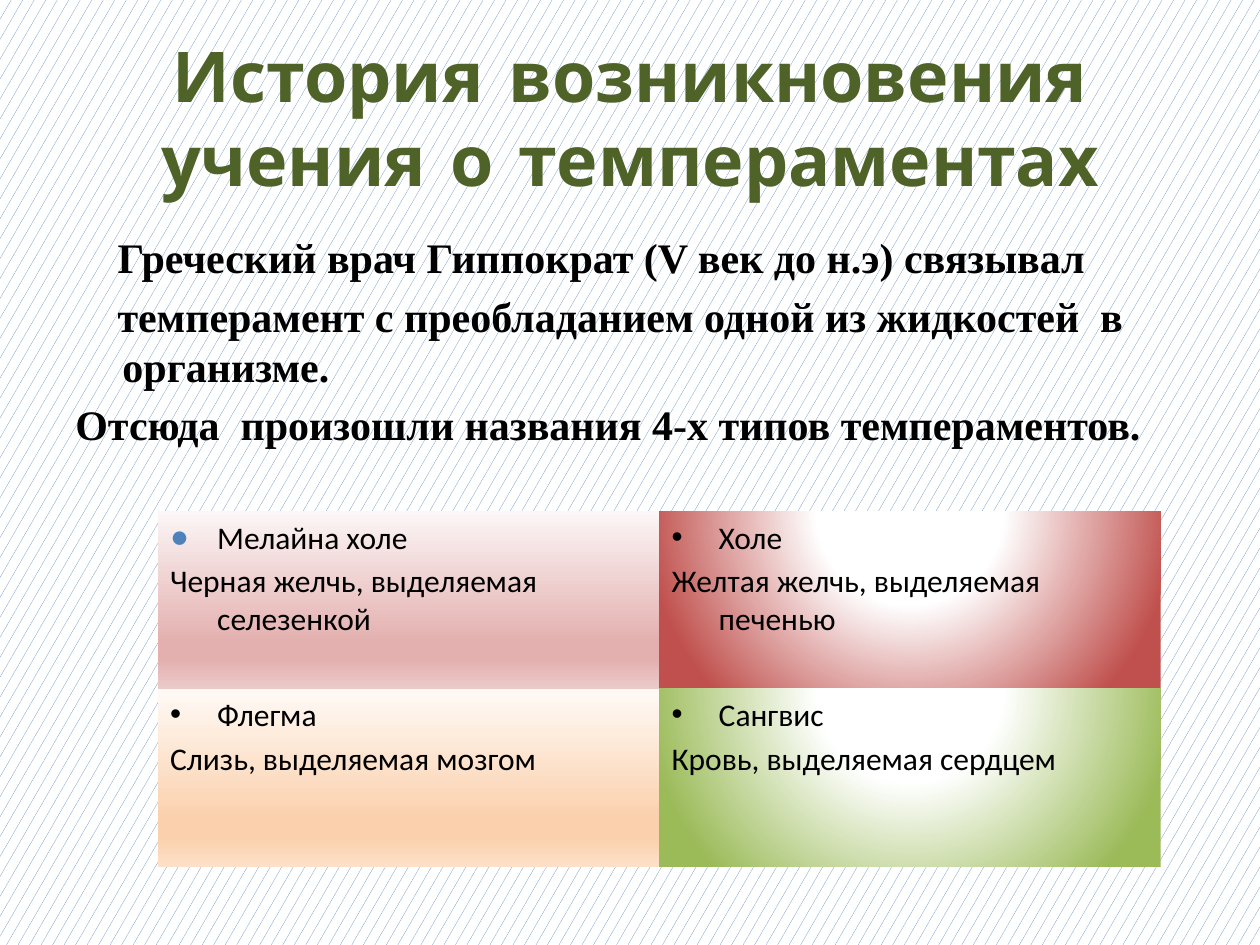
from lxml import etree
from pptx import Presentation
from pptx.dml.color import RGBColor
from pptx.enum.dml import MSO_PATTERN
from pptx.enum.shapes import MSO_SHAPE
from pptx.enum.text import MSO_ANCHOR, PP_ALIGN
from pptx.oxml.ns import qn
from pptx.util import Cm, Pt

RECTANGLE = MSO_SHAPE.RECTANGLE
CONFETTI = MSO_PATTERN.SMALL_CONFETTI
TOP, MIDDLE = MSO_ANCHOR.TOP, MSO_ANCHOR.MIDDLE
LEFT, CENTER = PP_ALIGN.LEFT, PP_ALIGN.CENTER

BLACK = RGBColor(0x00, 0x00, 0x00)
WHITE = RGBColor(0xFF, 0xFF, 0xFF)
BLUE = RGBColor(0x4F, 0x81, 0xBD)
DARK_GREEN = RGBColor(0x4F, 0x62, 0x28)
GREEN = RGBColor(0x9B, 0xBB, 0x59)
RED = RGBColor(0xC0, 0x50, 0x4D)
PINK_LIGHT = RGBColor(0xFC, 0xF6, 0xF6)
PINK = RGBColor(0xE3, 0xB0, 0xAF)
PINK_END = RGBColor(0xEC, 0xCA, 0xCA)
PEACH_LIGHT = RGBColor(0xFF, 0xFA, 0xF6)
PEACH = RGBColor(0xFB, 0xD0, 0xAC)
PEACH_END = RGBColor(0xFD, 0xE0, 0xC7)

HANGING = Cm(0.95)


def add_element(parent, tag, **attributes):
    element = etree.SubElement(parent, qn(tag))
    for name, value in attributes.items():
        element.set(name, str(value))
    return element


def fill_gradient(shape, stops, circular):
    """Fill with (percent, colour) stops, as a circle or from top to bottom."""
    shape.fill.background()
    properties = shape.fill._xPr
    plain_fill = properties.find(qn("a:noFill"))
    gradient = etree.Element(qn("a:gradFill"), rotWithShape="1")
    stop_list = add_element(gradient, "a:gsLst")
    for percent, color in stops:
        stop = add_element(stop_list, "a:gs", pos=percent * 1000)
        add_element(stop, "a:srgbClr", val=color)
    if circular:
        circle = add_element(gradient, "a:path", path="circle")
        add_element(circle, "a:fillToRect", l=50000, t=-80000, r=50000, b=180000)
    else:
        add_element(gradient, "a:lin", ang=5400000, scaled=0)
    properties.replace(plain_fill, gradient)


def indent(paragraph, left, first_line):
    properties = paragraph._p.get_or_add_pPr()
    properties.set("marL", str(left))
    properties.set("indent", str(first_line))


def add_bullet(paragraph, character, color):
    properties = paragraph._p.get_or_add_pPr()
    add_element(add_element(properties, "a:buClr"), "a:srgbClr", val=color)
    add_element(properties, "a:buFont", typeface="Arial")
    add_element(properties, "a:buChar", char=character)


def set_font(paragraph, name, size, color, bold=False):
    font = paragraph.font
    font.name, font.size, font.bold = name, Pt(size), bold
    font.color.rgb = color


def add_paragraphs(frame, texts, spacing):
    """Write the texts as paragraphs, with space between them."""
    for index, text in enumerate(texts):
        paragraph = frame.paragraphs[0] if index == 0 else frame.add_paragraph()
        paragraph.text = text
        paragraph.alignment = LEFT
        if index:
            paragraph.space_before = spacing
    return frame.paragraphs


def add_title(slide, left, top, width, height):
    frame = slide.shapes.add_textbox(left, top, width, height).text_frame
    frame.word_wrap = True
    frame.vertical_anchor = MIDDLE
    paragraph = frame.paragraphs[0]
    paragraph.text = "История возникновения учения о темпераментах"
    paragraph.alignment = CENTER
    set_font(paragraph, "Comic Neue", 40, DARK_GREEN, bold=True)


def add_introduction(slide, left, top, width, height):
    frame = slide.shapes.add_textbox(left, top, width, height).text_frame
    frame.word_wrap = True
    texts = (
        "Греческий врач Гиппократ (V век до н.э) связывал",
        "темперамент с преобладанием одной из жидкостей  в организме.",
        "Отсюда  произошли названия 4-х типов темпераментов.",
    )
    first_lines = (Cm(-0.1), Cm(-0.1), -HANGING)
    paragraphs = add_paragraphs(frame, texts, Pt(4.5))
    for paragraph, first_line in zip(paragraphs, first_lines):
        indent(paragraph, HANGING, first_line)
        set_font(paragraph, "Times New Roman", 24, BLACK, bold=True)


def add_fluid(slide, left, top, width, height, texts, stops, circular, bullet):
    """One body fluid: a bulleted name and its description."""
    shape = slide.shapes.add_shape(RECTANGLE, left, top, width, height)
    shape.shadow.inherit = False
    shape.line.fill.background()
    fill_gradient(shape, stops, circular)
    frame = shape.text_frame
    frame.word_wrap = True
    frame.vertical_anchor = TOP
    paragraphs = add_paragraphs(frame, texts, Pt(3.5))
    for paragraph in paragraphs:
        indent(paragraph, HANGING, -HANGING)
    add_bullet(paragraphs[0], *bullet)
    for paragraph in paragraphs:
        set_font(paragraph, "Calibri", 18, BLACK)


def add_fluid_grid(slide, left, top, width, height):
    """Two by two fluids: linear fills on the left, circular on the right."""
    dot = ("•", BLACK)
    pink = ((0, PINK_LIGHT), (74, PINK), (83, PINK), (100, PINK_END))
    peach = ((0, PEACH_LIGHT), (74, PEACH), (83, PEACH), (100, PEACH_END))
    red = ((0, WHITE), (35, WHITE), (100, RED))
    green = ((0, WHITE), (35, WHITE), (100, GREEN))
    fluids = (
        (("Мелайна холе", "Черная желчь, выделяемая селезенкой"), pink, ("●", BLUE)),
        (("Холе", "Желтая желчь, выделяемая печенью"), red, dot),
        (("Флегма", "Слизь, выделяемая мозгом"), peach, dot),
        (("Сангвис", "Кровь, выделяемая сердцем"), green, dot),
    )
    cell_width, cell_height = width // 2, height // 2
    for index, (texts, stops, bullet) in enumerate(fluids):
        row, column = divmod(index, 2)
        add_fluid(slide, left + column * cell_width, top + row * cell_height,
                  cell_width, cell_height, texts, stops, column == 1, bullet)


def main():
    presentation = Presentation()
    presentation.slide_width, presentation.slide_height = Cm(25.4), Cm(19.05)
    slide = presentation.slides.add_slide(presentation.slide_layouts[6])

    # Patterned background
    background = slide.background.fill
    background.patterned()
    background.pattern = CONFETTI
    background.fore_color.rgb = BLUE
    background.back_color.rgb = WHITE

    # Heading, introduction and the four fluids
    add_title(slide, Cm(1.27), Cm(0.76), Cm(22.86), Cm(3.18))
    add_introduction(slide, Cm(1.27), Cm(4.55), Cm(22.86), Cm(12.57))
    add_fluid_grid(slide, Cm(3.18), Cm(10.31), Cm(20.22), Cm(7.16))

    presentation.save("out.pptx")


if __name__ == "__main__":
    main()
